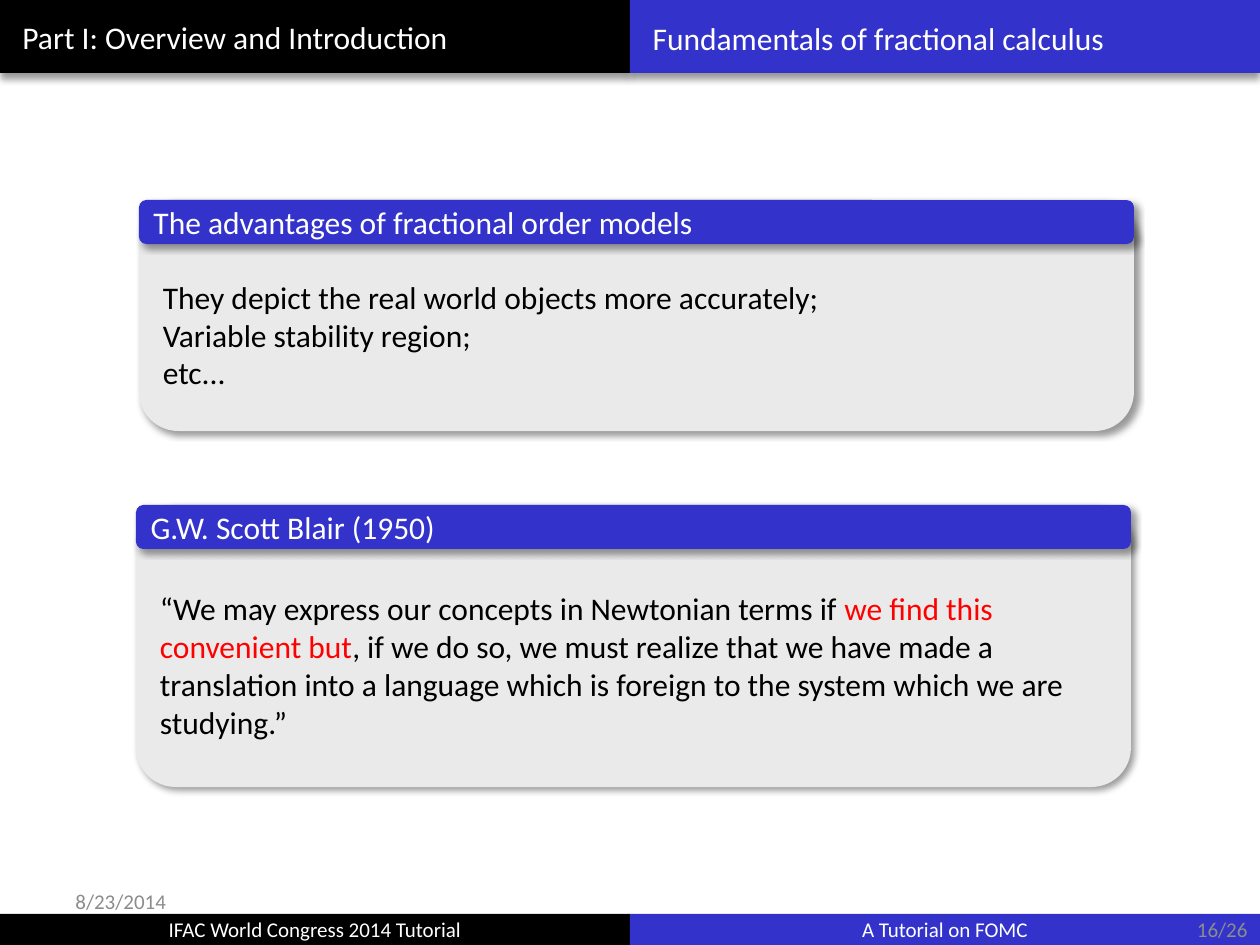
from lxml import etree
from pptx import Presentation
from pptx import util as u
from pptx.dml.color import RGBColor
from pptx.enum import shapes, text
from pptx.oxml import ns

BLACK = RGBColor(0x00, 0x00, 0x00)
WHITE = RGBColor(0xFF, 0xFF, 0xFF)
BLUE = RGBColor(0x33, 0x33, 0xCC)
PANEL_GRAY = RGBColor(0xEA, 0xEA, 0xEA)
FOOTER_GRAY = RGBColor(0x8C, 0x8C, 0x8C)
RED = RGBColor(0xFF, 0x00, 0x00)

PX_PER_INCH = 126
WIDTH, HEIGHT = 1260, 945
HALF = WIDTH // 2
TOP_BAR = 73
FOOTER_TOP, FOOTER_HEIGHT = 914, 31
BLOCK_WIDTH, BLOCK_HEADER = 995, 44
LINE = 38


def px(length):
    return u.Emu(round(length * u.Inches(1) / PX_PER_INCH))


class BlockSlide:
    """Holds the style and the current slide; lengths are whole px."""

    font = "Calibri"
    text_size, footer_size = 18, 12

    def __init__(self, deck):
        self.slide = deck.slides.add_slide(deck.slide_layouts[5])

    def place(self, shape, box):
        for side, length in zip(("left", "top", "width", "height"), box):
            setattr(shape, side, px(length))

    def set_text(self, shape, paragraphs, size, color, align=text.PP_ALIGN.LEFT):
        """Fill the frame; a paragraph is a string or a list of (words, color)."""
        frame = shape.text_frame
        frame_format = {"word_wrap": True, "auto_size": text.MSO_AUTO_SIZE.NONE,
                        "vertical_anchor": text.MSO_ANCHOR.MIDDLE}
        for key, value in frame_format.items():
            setattr(frame, key, value)
        for index, content in enumerate(paragraphs):
            paragraph = frame.add_paragraph() if index else frame.paragraphs[0]
            paragraph.alignment = align
            runs = [(content, color)] if isinstance(content, str) else content
            for words, run_color in runs:
                run = paragraph.add_run()
                run.text = words
                for key, value in {"name": self.font, "size": u.Pt(size)}.items():
                    setattr(run.font, key, value)
                run.font.color.rgb = run_color

    def shade(self, shape, angle):
        shape.shadow.inherit = False
        effects = shape._element.spPr.find(ns.qn("a:effectLst"))
        shadow = etree.SubElement(
            effects, ns.qn("a:outerShdw"), blurRad=str(int(u.Pt(4))),
            dist=str(int(u.Pt(3))), dir=str(angle * 60000), algn="tl",
            rotWithShape="0")
        tint = etree.SubElement(shadow, ns.qn("a:srgbClr"), val=str(BLACK))
        etree.SubElement(tint, ns.qn("a:alpha"), val="40000")

    def panel(self, box, fill, kind=shapes.MSO_SHAPE.RECTANGLE, shadow_angle=None):
        panel = self.slide.shapes.add_shape(kind, *map(px, box))
        panel.fill.solid()
        panel.fill.fore_color.rgb = fill
        panel.line.fill.background()
        panel.shadow.inherit = False
        if shadow_angle is not None:
            self.shade(panel, shadow_angle)
        return panel

    def label(self, box, words, size, color, align=text.PP_ALIGN.LEFT):
        label = self.slide.shapes.add_textbox(*map(px, box))
        self.set_text(label, [words], size, color, align)

    def title(self, box, words):
        """Set the title and bring it in front of the top bar."""
        title = self.slide.shapes.title
        self.place(title, box)
        self.set_text(title, [words], self.text_size, WHITE)
        self.slide.shapes._spTree.append(title._element)

    def block(self, left, top, height, heading, paragraphs, corner):
        rounded = shapes.MSO_SHAPE.ROUNDED_RECTANGLE
        body = self.panel((left, top, BLOCK_WIDTH, height), PANEL_GRAY, rounded, 45)
        body.adjustments[0] = corner
        self.set_text(body, paragraphs, self.text_size, BLACK)
        # One line of extra room on top keeps the text clear of the heading.
        body.text_frame.margin_top = body.text_frame.margin_bottom + px(LINE)
        header = self.panel((left, top, BLOCK_WIDTH, BLOCK_HEADER), BLUE, rounded, 45)
        self.set_text(header, [heading], self.text_size, WHITE)


def main():
    deck = Presentation()
    deck.slide_width, deck.slide_height = px(WIDTH), px(HEIGHT)
    page = BlockSlide(deck)

    footers = ("IFAC World Congress 2014 Tutorial", "A Tutorial on FOMC")
    for column, (fill, footer) in enumerate(zip((BLACK, BLUE), footers)):
        left = column * HALF
        page.panel((left, 0, HALF, TOP_BAR), fill, shadow_angle=90)
        bar = page.panel((left, FOOTER_TOP, HALF, FOOTER_HEIGHT), fill)
        page.set_text(bar, [footer], page.footer_size, WHITE, text.PP_ALIGN.CENTER)

    page.label((10, 0, 609, TOP_BAR), "Part I: Overview and Introduction",
               page.text_size, WHITE)
    page.title((640, 1, 609, TOP_BAR), "Fundamentals of fractional calculus")

    page.block(139, 200, 231, "The advantages of fractional order models",
               ["They depict the real world objects more accurately;",
                "Variable stability region;", "etc..."], 0.17)
    quote = [("“We may express our concepts in Newtonian terms if ", BLACK),
             ("we find this convenient but", RED),
             (", if we do so, we must realize that we have made a translation into "
              "a language which is foreign to the system which we are studying.”",
              BLACK)]
    page.block(136, 505, 282, "G.W. Scott Blair (1950)", [quote], 0.14)

    page.label((1176, FOOTER_TOP, 84, FOOTER_HEIGHT), "16/26", page.footer_size,
               FOOTER_GRAY, text.PP_ALIGN.RIGHT)
    page.label((63, 876, 294, 50), "8/23/2014", page.footer_size, FOOTER_GRAY)
    deck.save("out.pptx")


if __name__ == "__main__":
    main()
